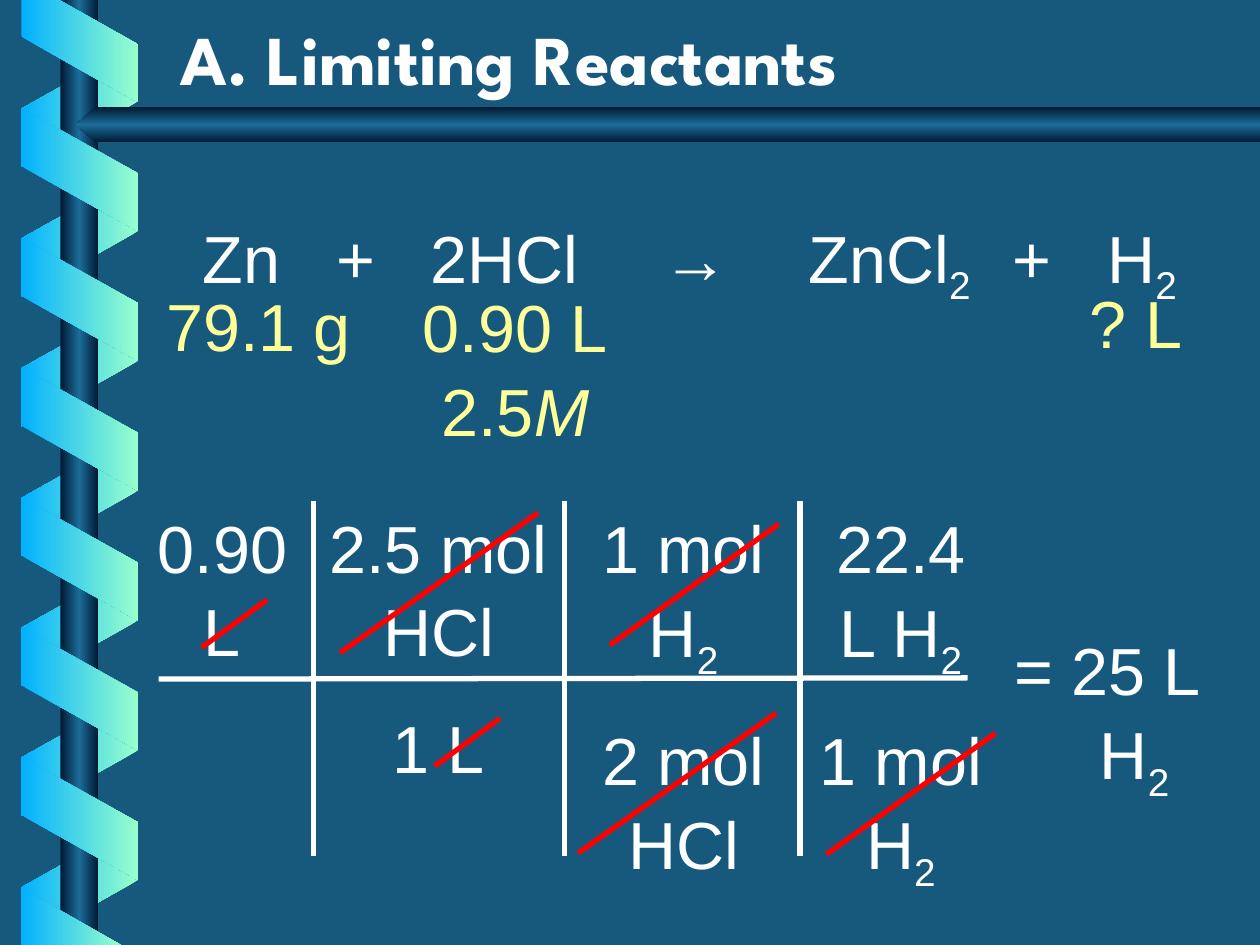
from lxml import etree
from pptx import Presentation
from pptx import util as u
from pptx.dml.color import RGBColor
from pptx.enum import shapes, text
from pptx.oxml import ns

WHITE = RGBColor(0xFF, 0xFF, 0xFF)
YELLOW = RGBColor(0xFF, 0xFF, 0x99)
RED = RGBColor(0xFF, 0x00, 0x00)
BACKGROUND = RGBColor(0x17, 0x59, 0x7D)
NAVY = RGBColor(0x00, 0x19, 0x32)
STEEL = RGBColor(0x1C, 0x6D, 0x9A)
SKY = RGBColor(0x01, 0xB0, 0xFF)
MINT = RGBColor(0x99, 0xFF, 0xCC)

COLUMNS, ROWS = 100, 75
WIDTH, HEIGHT = u.Inches(10), u.Inches(7.5)
SPACE_BEFORE = u.Pt(19)


def column(count):
    """Return the length of a number of grid columns."""
    return round(WIDTH * count / COLUMNS)


def row(count):
    """Return the length of a number of grid rows."""
    return round(HEIGHT * count / ROWS)


def place(left, top, width, height):
    """Turn a box in grid units into slide lengths."""
    return column(left), row(top), column(width), row(height)


def sub_element(parent, tag, **attributes):
    """Append a DrawingML element."""
    return etree.SubElement(parent, ns.qn(tag), attributes)


def paint_gradient(shape, colors, angle):
    """Fill a shape with evenly spaced colours and no outline."""
    shape.shadow.inherit = False
    shape.line.fill.background()
    shape.fill.gradient()
    shape.fill.gradient_angle = angle
    stops = shape._element.spPr.find(ns.qn("a:gradFill")).find(ns.qn("a:gsLst"))
    for stop in list(stops):
        stops.remove(stop)
    for index, color in enumerate(colors):
        position = round(100000 * index / (len(colors) - 1))
        stop = sub_element(stops, "a:gs", pos=str(position))
        sub_element(stop, "a:srgbClr", val=str(color))


def add_preset(slide, kind, box, colors, angle, adjustment=None, rotation=0, flip=False):
    """Add a gradient preset shape."""
    shape = slide.shapes.add_shape(kind, *place(*box))
    if adjustment is not None:
        shape.adjustments[0] = adjustment
    shape.rotation = rotation
    if flip:
        shape._element.spPr.find(ns.qn("a:xfrm")).set("flipH", "1")
    paint_gradient(shape, colors, angle)


def add_ribbon(slide, top, count, colors, rotation, flip):
    """Add one side of the spiral as equally spaced parallelograms."""
    for index in range(count):
        box = (1.4, top + 10.3 * index, 9.8, 9.3)
        add_preset(slide, shapes.MSO_SHAPE.PARALLELOGRAM, box, colors, 270,
                   0.56, rotation, flip)


def add_ribbon_end(slide, points):
    """Add a cropped end of the spiral."""
    start, *others = [(column(x), row(y)) for x, y in points]
    builder = slide.shapes.build_freeform(*start, scale=1.0)
    builder.add_line_segments(others, close=True)
    paint_gradient(builder.convert_to_shape(), (SKY, MINT), 0)


def add_spiral(slide):
    """Add the binding spiral, its rod and the header bar."""
    bar = (NAVY, STEEL, NAVY)
    add_ribbon(slide, 3.7, 7, (MINT, SKY), 90, True)
    add_preset(slide, shapes.MSO_SHAPE.RECTANGLE, (4.8, 0, 3, ROWS), bar, 0)
    add_ribbon(slide, 8.8, 6, (SKY, MINT), 270, False)
    add_ribbon_end(slide, [(1.7, 0), (1.7, 2.9), (10.9, 8.1), (10.9, 3.5), (4.7, 0)])
    add_ribbon_end(slide, [(9.6, 75), (1.7, 70.5), (1.7, 75)])
    add_preset(slide, shapes.MSO_SHAPE.PENTAGON, (6, 8.5, 94, 2.8), bar, 270, 0.59, 0, True)


def add_title(slide, words):
    """Fill the title placeholder with shadowed text."""
    title = slide.shapes.title
    title.left, title.top, title.width, title.height = place(13.3, 0, 85, 8.4)
    title.text_frame.vertical_anchor = text.MSO_ANCHOR.BOTTOM
    paragraph = title.text_frame.paragraphs[0]
    paragraph.alignment = text.PP_ALIGN.LEFT
    run = paragraph.add_run()
    run.text = words
    effects = sub_element(run._r.get_or_add_rPr(), "a:effectLst")
    shadow = sub_element(effects, "a:outerShdw", dist="35921", dir="2700000")
    sub_element(shadow, "a:srgbClr", val=str(NAVY))
    set_font(paragraph, "League Spartan", 40, WHITE)
    paragraph.font.bold = True


def set_font(paragraph, name, size, color):
    """Set the font of a whole paragraph."""
    paragraph.font.name = name
    paragraph.font.size = u.Pt(size)
    paragraph.font.color.rgb = color


def add_runs(paragraph, runs):
    """Add runs, with _ marking a subscript and * marking italics."""
    for words in runs:
        run = paragraph.add_run()
        run.text = words.lstrip("_*")
        if words.startswith("_"):
            run._r.get_or_add_rPr().set("baseline", "-25000")
        elif words.startswith("*"):
            run.font.italic = True


def add_text(slide, box, lines, color=WHITE, centered=True, spacing=1.05, gap_line=None):
    """Add a text box and return its paragraphs."""
    frame = slide.shapes.add_textbox(*place(*box)).text_frame
    frame.word_wrap = True
    for index, runs in enumerate(lines):
        paragraph = frame.add_paragraph() if index else frame.paragraphs[0]
        paragraph.alignment = text.PP_ALIGN.CENTER if centered else text.PP_ALIGN.LEFT
        paragraph.line_spacing = spacing
        if index == gap_line:
            paragraph.space_before = SPACE_BEFORE
        set_font(paragraph, "Arial", 38, color)
        add_runs(paragraph, runs)
    return frame.paragraphs


def add_line(slide, start, end, color):
    """Add a straight line between two grid points."""
    line = slide.shapes.add_connector(
        shapes.MSO_CONNECTOR.STRAIGHT,
        column(start[0]), row(start[1]), column(end[0]), row(end[1]))
    line.line.color.rgb = color
    line.line.width = u.Pt(3)
    sub_element(line._element.spPr, "a:effectLst")


def add_equation(slide):
    """Add the reaction on tab stops, with the known amounts below."""
    runs = ("Zn\t+\t2HCl\t→\tZnCl", "_2", "\t+\tH", "_2")
    equation = add_text(slide, (15.1, 16, 82, 9), [runs], centered=False, spacing=1.1)[0]
    properties = equation._p.get_or_add_pPr()
    tabs = sub_element(properties, "a:tabLst")
    for stop in (10.6, 18.1, 36.5, 48.1, 64.3, 71.8):
        sub_element(tabs, "a:tab", pos=str(column(stop)), algn="l")
    properties.find(ns.qn("a:defRPr")).addprevious(tabs)
    add_text(slide, (12.2, 21.8, 20, 7.8), [("79.1 g",)], YELLOW, False)
    add_text(slide, (85.5, 21.6, 12.7, 7.8), [("? L",)], YELLOW, False)
    add_text(slide, (30.9, 21.9, 20, 14), [("0.90 L",), ("2.5", "*M")], YELLOW)


def add_conversion(slide):
    """Add the unit conversion, its rules and the cancelled units."""
    factors = [
        (11.4, 12.5, [("0.90",), ("L",)]),
        (24.9, 19.8, [("2.5 mol",), ("HCl",), ("1 L",)]),
        (44.8, 18.9, [("1 mol",), ("H", "_2"), ("2 mol",), ("HCl",)]),
        (63.1, 16.8, [("22.4",), ("L H", "_2"), ("1 mol",), ("H", "_2")]),
    ]
    for left, width, lines in factors:
        add_text(slide, (left, 39.4, width, 29.4), lines, gap_line=2)
    result = add_text(slide, (79.5, 49.1, 20.5, 18.1), [("= 25 L",), ("H", "_2")], centered=False)
    result[1]._p.get_or_add_pPr().set("marL", str(column(6.8)))

    strikes = [
        (15.7, 11.1, [(27, 51.8), (45.9, 67.7)]),
        (13.4, 9.6, [(48.4, 51.2), (65.6, 67.8)]),
        (5.2, 3.8, [(34.5, 60.8), (16, 51.4)]),
    ]
    for width, height, starts in strikes:
        for left, bottom in starts:
            add_line(slide, (left + width, bottom - height), (left, bottom), RED)

    add_line(slide, (12.6, 53.9), (76.8, 53.8), WHITE)
    for left in (24.9, 44.8, 63.5):
        add_line(slide, (left, 39.8), (left, 67.9), WHITE)


def main():
    """Build and save the slide."""
    presentation = Presentation()
    presentation.slide_width, presentation.slide_height = WIDTH, HEIGHT
    slide = presentation.slides.add_slide(presentation.slide_layouts[5])
    slide.background.fill.solid()
    slide.background.fill.fore_color.rgb = BACKGROUND
    add_spiral(slide)
    add_title(slide, "A. Limiting Reactants")
    add_equation(slide)
    add_conversion(slide)
    presentation.save("out.pptx")


if __name__ == "__main__":
    main()
